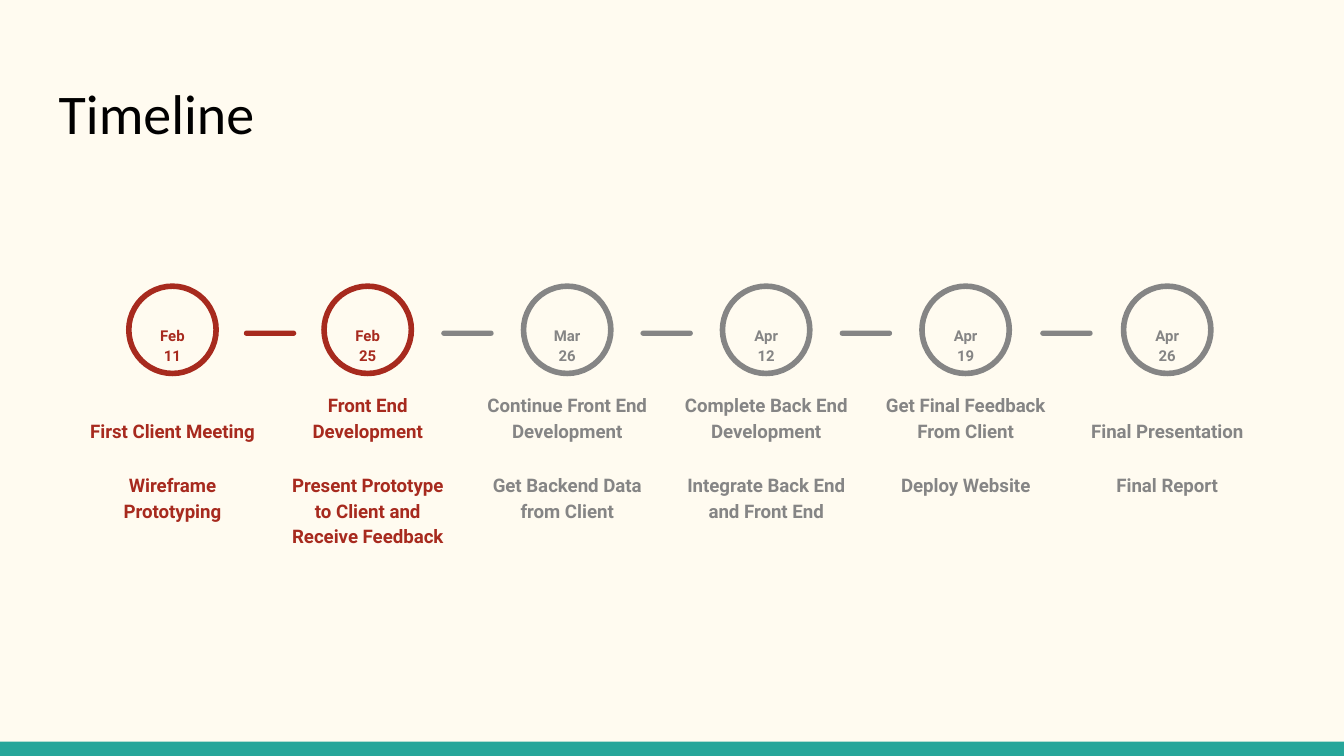
from collections import namedtuple
from dataclasses import dataclass

from pptx import Presentation
from pptx import util as u
from pptx.dml.color import RGBColor
from pptx.enum import shapes, text

Box = namedtuple("Box", "left top width height")  # centimetres


@dataclass(frozen=True)
class Theme:
    background: str = "FFFBF0"
    footer: str = "26A69A"
    ink: str = "000000"
    done: str = "A72A1E"
    planned: str = "858585"
    title_font: str = "Calibri"
    body_font: str = "Roboto"
    title_size: float = 30
    label_size: float = 10
    date_size: float = 8
    ring_width: float = 3


THEME = Theme()

# Centre across the slide, date, heading, follow-up task, done
MILESTONES = [
    (3.26, "Feb 11", "First Client Meeting", "Wireframe Prototyping", True),
    (6.95, "Feb 25", "Front End Development",
     "Present Prototype to Client and Receive Feedback", True),
    (10.72, "Mar 26", "Continue Front End Development",
     "Get Backend Data from Client", False),
    (14.48, "Apr 12", "Complete Back End Development",
     "Integrate Back End and Front End", False),
    (18.25, "Apr 19", "Get Final Feedback From Client", "Deploy Website", False),
    (22.06, "Apr 26", "Final Presentation", "Final Report", False),
]


def lengths(box):
    return [u.Cm(value) for value in box]


def apply(target, formats):
    for name, value in formats.items():
        setattr(target, name, value)


def write(frame, words, font, size, color, bold=False,
          anchor=text.MSO_ANCHOR.TOP, align=text.PP_ALIGN.CENTER, spacing=1.15):
    margin = u.Cm(0.25)
    apply(frame, dict(word_wrap=True, auto_size=text.MSO_AUTO_SIZE.NONE,
                      vertical_anchor=anchor, margin_left=margin,
                      margin_right=margin, margin_top=margin,
                      margin_bottom=margin))
    paragraph = frame.paragraphs[0]
    apply(paragraph, dict(alignment=align, line_spacing=spacing))
    run = paragraph.add_run()
    run.text = words
    apply(run.font, dict(name=font, size=u.Pt(size), bold=bold))
    run.font.color.rgb = RGBColor.from_string(color)


def add_solid(parent, kind, box, color):
    solid = parent.add_shape(kind, *lengths(box))
    solid.shadow.inherit = False
    solid.fill.solid()
    solid.fill.fore_color.rgb = RGBColor.from_string(color)
    solid.line.fill.background()
    return solid


def place_title(slide, box):
    title = slide.shapes.title
    apply(title, dict(zip(Box._fields, lengths(box))))
    write(title.text_frame, "Timeline", THEME.title_font, THEME.title_size,
          THEME.ink, align=text.PP_ALIGN.LEFT, spacing=1.0)


def place_milestone(slide, box, date, heading, task, color):
    parts = slide.shapes.add_group_shape().shapes
    center = box.left + box.width / 2

    # Ring
    diameter = 1.65
    ring = parts.add_shape(
        shapes.MSO_SHAPE.OVAL,
        *lengths(Box(center - diameter / 2, box.top, diameter, diameter)))
    ring.shadow.inherit = False
    ring.fill.background()
    ring.line.color.rgb = RGBColor.from_string(color)
    ring.line.width = u.Pt(THEME.ring_width)

    # Date inside the ring, heading and task below it
    top, bottom = text.MSO_ANCHOR.TOP, text.MSO_ANCHOR.BOTTOM
    labels = [
        (date, Box(center - 0.61, box.top + 0.46, 1.22, 0.89), THEME.date_size, top),
        (heading, Box(box.left, box.top + 1.96, box.width, 1.24),
         THEME.label_size, bottom),
        (task, Box(box.left, box.top + 3.23, box.width, box.height - 3.23),
         THEME.label_size, top),
    ]
    for words, place, size, anchor in labels:
        label = parts.add_textbox(*lengths(place))
        write(label.text_frame, words, THEME.body_font, size, color,
              bold=True, anchor=anchor)


def place_timeline(slide, box):
    column, dash_width, dash_height = 3.63, 0.99, 0.1
    for center, date, heading, task, done in MILESTONES:
        color = THEME.done if done else THEME.planned
        place_milestone(
            slide,
            Box(box.left + center - column / 2, box.top, column, box.height),
            date, heading, task, color)

    # A dash halfway between neighbours, coloured like the later one
    for earlier, later in zip(MILESTONES, MILESTONES[1:]):
        middle = box.left + (earlier[0] + later[0]) / 2
        dash = add_solid(
            slide.shapes, shapes.MSO_SHAPE.ROUNDED_RECTANGLE,
            Box(middle - dash_width / 2, box.top + 0.84, dash_width, dash_height),
            THEME.done if later[-1] else THEME.planned)
        dash.adjustments[0] = 0.5


def main():
    deck = Presentation()
    width, height = 25.4, 14.29
    apply(deck, dict(slide_width=u.Cm(width), slide_height=u.Cm(height)))
    slide = deck.slides.add_slide(deck.slide_layouts.get_by_name("Title Only"))
    slide.background.fill.solid()
    slide.background.fill.fore_color.rgb = RGBColor.from_string(THEME.background)

    # Footer band
    band = 0.27
    add_solid(slide.shapes, shapes.MSO_SHAPE.RECTANGLE,
              Box(0, height - band, width, band), THEME.footer)
    place_title(slide, Box(0.86, 1.24, 23.67, 1.7))
    place_timeline(slide, Box(0, 5.41, width, 5.28))
    deck.save("out.pptx")


if __name__ == "__main__":
    main()
